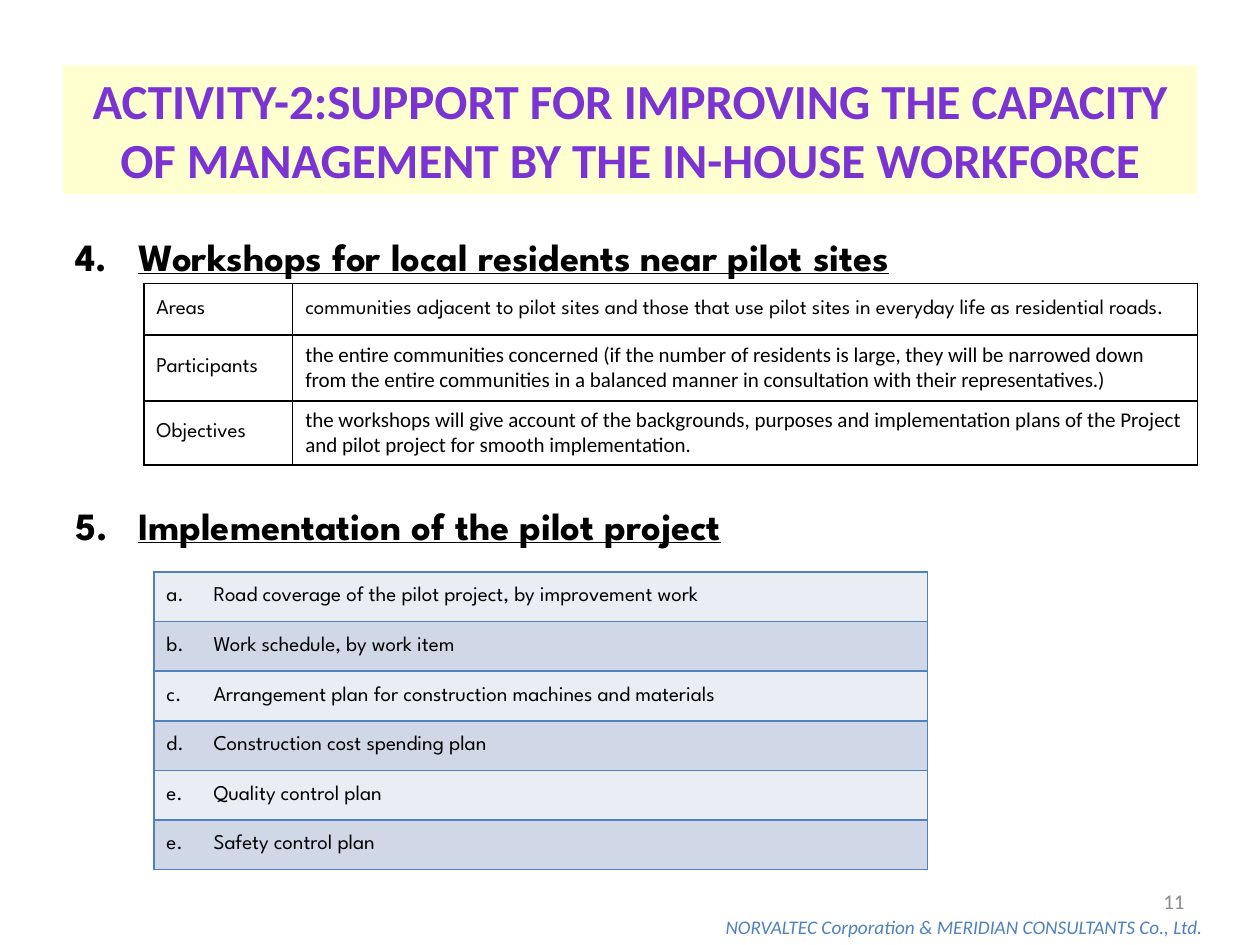
import pptx
import pptx.util
import pptx.dml.color
import pptx.enum.text
import pptx.oxml.ns
import lxml.etree

Cm = pptx.util.Cm
Pt = pptx.util.Pt
RGBColor = pptx.dml.color.RGBColor
Align = pptx.enum.text.PP_ALIGN
Anchor = pptx.enum.text.MSO_ANCHOR

BLACK = RGBColor(0x00, 0x00, 0x00)
GREY = RGBColor(0x8C, 0x8C, 0x8C)
BLUE = RGBColor(0x4F, 0x81, 0xBD)
PURPLE = RGBColor(0x7B, 0x34, 0xD2)
YELLOW = RGBColor(0xFF, 0xFF, 0x66)
BANDS = (RGBColor(0xE9, 0xED, 0xF4), RGBColor(0xD0, 0xD8, 0xE8))

SANS = "Calibri"
DISPLAY = "League Spartan"

TITLE = "ACTIVITY-2:SUPPORT FOR IMPROVING THE CAPACITY OF MANAGEMENT BY THE IN-HOUSE WORKFORCE"
WORKSHOP_ROWS = (
    ("Areas", "communities adjacent to pilot sites and those that use pilot sites "
     "in everyday life as residential roads.", DISPLAY, 1.03),
    ("Participants", "the entire communities concerned (if the number of residents is large, "
     "they will be narrowed down from the entire communities in a balanced manner in "
     "consultation with their representatives.)", SANS, 1.33),
    ("Objectives", "the workshops will give account of the backgrounds, purposes and "
     "implementation plans of the Project and pilot project for smooth implementation.",
     SANS, 1.29),
)
PLANS = (
    (1, "Road coverage of the pilot project, by improvement work"),
    (2, "Work schedule, by work item"),
    (3, "Arrangement plan for construction machines and materials"),
    (4, "Construction cost spending plan"),
    (5, "Quality control plan"),
    (5, "Safety control plan"),
)


def add_child(parent, tag, **attributes):
    """Append a DrawingML element with the given attributes."""
    child = lxml.etree.SubElement(parent, pptx.oxml.ns.qn(tag))
    for name, value in attributes.items():
        child.set(name, str(value))
    return child


def write(frame, text, size, font=SANS, colour=BLACK, align=Align.LEFT, **styles):
    """Fill a text frame with one formatted paragraph and return it."""
    frame.text = text
    frame.word_wrap = True
    para = frame.paragraphs[0]
    para.alignment = align
    for span in para.runs:
        span.font.name = font
        span.font.size = Pt(size)
        span.font.color.rgb = colour
        for name, value in styles.items():
            setattr(span.font, name, value)
    return para


def number(para, style, start, indent):
    """Give a paragraph an automatic number with a hanging indent."""
    properties = para._p.get_or_add_pPr()
    properties.set("marL", str(indent))
    properties.set("indent", str(-indent))
    add_child(properties, "a:buFont", typeface="+mj-lt")
    add_child(properties, "a:buAutoNum", type=style, startAt=start)


def add_label(page, left, top, width, height, text, size, **styles):
    """Add a vertically centred text box and return its paragraph."""
    box = page.shapes.add_textbox(Cm(left), Cm(top), Cm(width), Cm(height))
    box.text_frame.vertical_anchor = Anchor.MIDDLE
    return write(box.text_frame, text, size, **styles)


def add_heading(page, top, start, text):
    """Add a numbered, underlined section heading."""
    para = add_label(page, 1.27, top, 20.75, 1.2, text, 22,
                     font=DISPLAY, bold=True, underline=True)
    number(para, "arabicPeriod", start, Cm(1.27))


def format_title(page):
    """Place and format the title over a translucent band."""
    title = page.shapes.title
    title.left, title.top, title.width, title.height = Cm(1.27), Cm(1.32), Cm(22.86), Cm(2.59)
    title.fill.solid()
    title.fill.fore_color.rgb = YELLOW
    colour = title.fill._xPr.find(".//" + pptx.oxml.ns.qn("a:srgbClr"))
    add_child(colour, "a:alpha", val=30000)
    title.text_frame.auto_size = pptx.enum.text.MSO_AUTO_SIZE.NONE
    title.text_frame.vertical_anchor = Anchor.MIDDLE
    write(title.text_frame, TITLE, 28, colour=PURPLE, align=Align.CENTER, bold=True)


def add_grid(page, left, top, widths, heights):
    """Add an unstyled table with the given column widths and row heights."""
    grid = page.shapes.add_table(len(heights), len(widths), Cm(left), Cm(top),
                                 Cm(sum(widths)), Cm(sum(heights))).table
    grid.first_row = grid.horz_banding = False
    for column, width in zip(grid.columns, widths):
        column.width = Cm(width)
    for row, height in zip(grid.rows, heights):
        row.height = Cm(height)
    return grid


def fill_cell(cell, text, font, border, fill=None):
    """Write a bordered table cell and return its paragraph."""
    properties = cell._tc.get_or_add_tcPr()
    for side in "LRTB":
        line = add_child(properties, "a:ln" + side, w=Pt(1))
        add_child(add_child(line, "a:solidFill"), "a:srgbClr", val=border)
    if fill is None:
        cell.fill.background()
    else:
        cell.fill.solid()
        cell.fill.fore_color.rgb = fill
    cell.vertical_anchor = Anchor.MIDDLE
    return write(cell.text_frame, text, 12, font=font)


def add_workshop_table(page):
    """Add the table that describes the workshops."""
    grid = add_grid(page, 2.9, 5.72, (3, 18.24), [row[-1] for row in WORKSHOP_ROWS])
    for index, (label, detail, font, _) in enumerate(WORKSHOP_ROWS):
        fill_cell(grid.cell(index, 0), label, DISPLAY, BLACK)
        fill_cell(grid.cell(index, 1), detail, font, BLACK)


def add_plan_table(page):
    """Add the banded list of implementation plans."""
    grid = add_grid(page, 3.1, 11.53, (15.6,), [1] * len(PLANS))
    for index, (letter, text) in enumerate(PLANS):
        para = fill_cell(grid.cell(index, 0), text, DISPLAY, BLUE, BANDS[index % 2])
        number(para, "alphaLcPeriod", letter, Cm(0.95))


def main():
    """Build the slide and save the deck."""
    deck = pptx.Presentation()
    deck.slide_width, deck.slide_height = Cm(25.4), Cm(19.05)
    page = deck.slides.add_slide(deck.slide_layouts[5])
    format_title(page)
    add_heading(page, 4.56, 4, "Workshops for local residents near pilot sites")
    add_workshop_table(page)
    add_heading(page, 9.98, 5, "Implementation of the pilot project")
    add_plan_table(page)
    add_label(page, 18.2, 17.66, 5.93, 1.01, "11", 12, colour=GREY, align=Align.RIGHT)
    add_label(page, 11.8, 18.32, 12.7, 0.73,
              "NORVALTEC Corporation & MERIDIAN CONSULTANTS Co., Ltd.", 11,
              colour=BLUE, align=Align.RIGHT, italic=True)
    deck.save("out.pptx")


if __name__ == "__main__":
    main()
